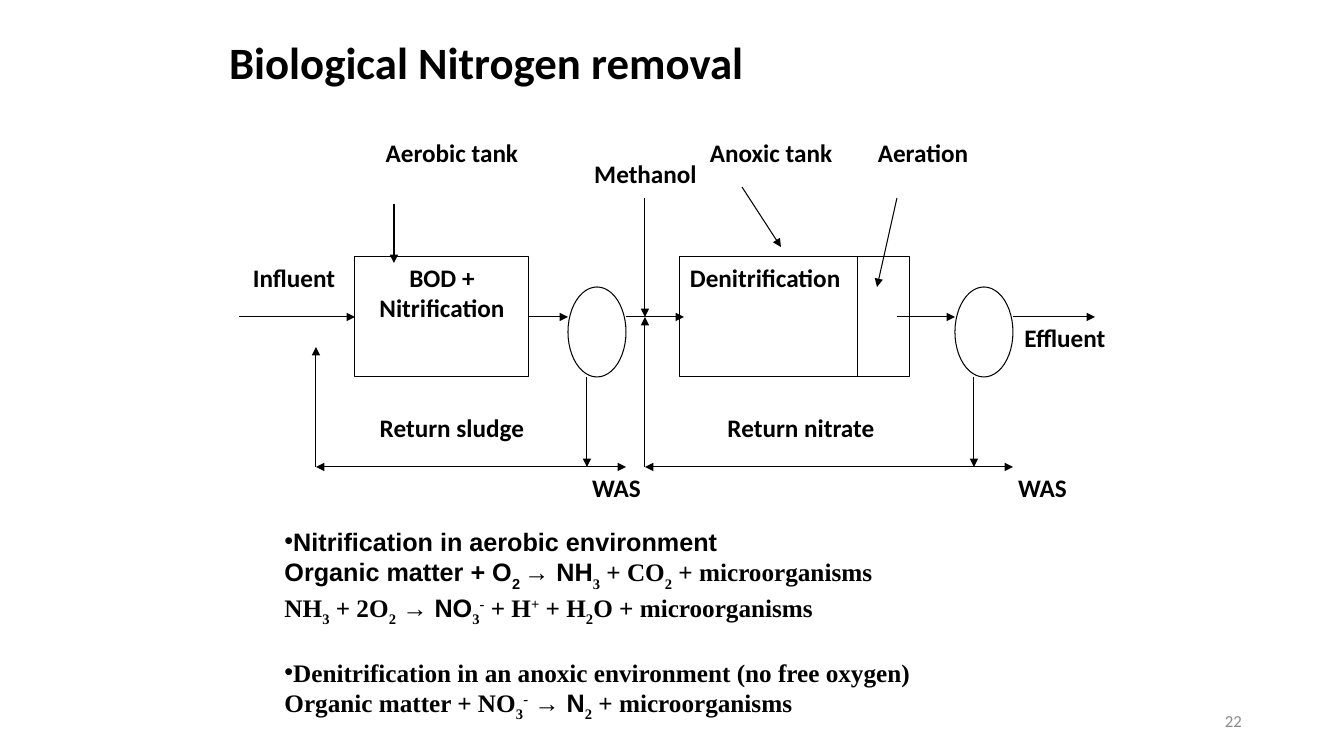
import pptx
import pptx.dml.color
import pptx.enum.dml
import pptx.enum.shapes
import pptx.enum.text
import pptx.oxml.ns
import pptx.util
from lxml import etree

SCALE = 914400 / 100.8
COLOURS = {"ink": "000000", "paper": "FFFFFF", "number": "898989"}
SANS, ARIAL, TIMES = "Calibri", "Arial", "Times New Roman"
SUB, SUP = -30000, 30000

TITLE = ("Biological Nitrogen removal", (219, 30, 907, 70))
PAGE = ("22", (950, 701, 302, 40))

# Diagram levels and the columns shared by several parts
TANK_TOP, TANK_BOTTOM, FLOW, RETURN = 257, 377, 317, 467
CLARIFIER_TOP, CLARIFIER_WIDTH = 287, 58
RECYCLE, DOSING = 316, 645
FIRST_CLARIFIER, SECOND_CLARIFIER = 568, 955

TANKS = [  # name, left, width, alignment
    ("BOD + Nitrification", 355, 174, "CENTER"),
    ("Denitrification", 680, 230, "LEFT"),
]
LABELS = [  # text, left, top, width
    ("Aerobic tank", 355, 132, 194),
    ("Methanol", 568, 153, 155),
    ("Anoxic tank", 684, 132, 174),
    ("Aeration", 836, 132, 174),
    ("Influent", 236, TANK_TOP, 116),
    ("Effluent", 1007, FLOW, 116),
    ("Return sludge", 355, 407, 194),
    ("Return nitrate", 704, 407, 194),
    ("WAS", 568, RETURN, 97),
    ("WAS", 994, RETURN, 97),
]
END, BOTH, NONE = ("tailEnd",), ("headEnd", "tailEnd"), ()
FLOWS = [  # start, finish, arrowheads
    ((626, FLOW), (684, FLOW), END),
    ((897, FLOW), (955, FLOW), END),
    ((1013, FLOW), (1095, FLOW), END),
    ((RECYCLE, RETURN), (RECYCLE, 347), END),
    ((626, RETURN), (RECYCLE, RETURN), BOTH),
    ((587, TANK_BOTTOM), (587, RETURN), END),
    ((DOSING, RETURN), (DOSING, FLOW), END),
    ((DOSING, RETURN), (1013, RETURN), BOTH),
    ((974, TANK_BOTTOM), (974, RETURN), END),
    ((858, TANK_TOP), (858, TANK_BOTTOM), NONE),
    ((394, 204), (394, 263), END),
    ((DOSING, 198), (DOSING, FLOW), END),
    ((742, 187), (781, 247), END),
    ((897, 198), (877, 287), END),
]
REACTIONS_BOX = (224, 521, 893, 224)
REACTIONS = [  # bulleted, space before in points, runs of (text, font, baseline)
    (True, 0, [("Nitrification in aerobic environment", ARIAL, 0)]),
    (False, 0, [("Organic matter + O", ARIAL, 0), ("2 ", ARIAL, SUB), ("→", TIMES, 0),
                (" NH", ARIAL, 0), ("3", TIMES, SUB), (" + CO", TIMES, 0),
                ("2", TIMES, SUB), (" + microorganisms", TIMES, 0)]),
    (False, 0, [("NH", TIMES, 0), ("3", TIMES, SUB), (" + 2O", TIMES, 0),
                ("2", TIMES, SUB), (" →", TIMES, 0), (" NO", ARIAL, 0),
                ("3", TIMES, SUB), ("-", TIMES, SUP), (" + H", TIMES, 0),
                ("+", TIMES, SUP), (" + H", TIMES, 0), ("2", TIMES, SUB),
                ("O + microorganisms", TIMES, 0)]),
    (True, 21, [("Denitrification in an anoxic environment (no free oxygen)", TIMES, 0)]),
    (False, 0, [("Organic matter + NO", TIMES, 0), ("3", TIMES, SUB), ("-", TIMES, SUP),
                (" →", TIMES, 0), (" N", ARIAL, 0), ("2", TIMES, SUB),
                (" + microorganisms", TIMES, 0)]),
]


def px(*lengths):
    return [pptx.util.Emu(round(length * SCALE)) for length in lengths]


def colour(name):
    return pptx.dml.color.RGBColor.from_string(COLOURS[name])


def add_run(paragraph, text, size=18, font=SANS, bold=True, ink="ink", baseline=0):
    run = paragraph.add_run()
    run.text = text
    run.font.name, run.font.size, run.font.bold = font, pptx.util.Pt(size), bold
    run.font.color.rgb = colour(ink)
    if baseline:
        run.font._element.set("baseline", str(baseline))


def place(shape, box):
    shape.left, shape.top, shape.width, shape.height = px(*box)


def set_frame(shape, anchor="TOP"):
    frame = shape.text_frame
    frame.word_wrap = True
    frame.auto_size = pptx.enum.text.MSO_AUTO_SIZE.NONE
    frame.vertical_anchor = getattr(pptx.enum.text.MSO_ANCHOR, anchor)
    return frame


def write_line(shape, text, align, anchor="TOP", **style):
    paragraph = set_frame(shape, anchor).paragraphs[0]
    paragraph.alignment = getattr(pptx.enum.text.PP_ALIGN, align)
    add_run(paragraph, text, **style)
    return paragraph


def add_vessel(slide, kind, box):
    vessel = slide.shapes.add_shape(getattr(pptx.enum.shapes.MSO_SHAPE, kind), *px(*box))
    vessel.shadow.inherit = False
    vessel.fill.solid()
    vessel.fill.fore_color.rgb = colour("paper")
    vessel.line.color.rgb = colour("ink")
    vessel.line.width = pptx.util.Pt(0.75)
    return vessel


def add_flow(slide, start, finish, heads):
    flow = slide.shapes.add_connector(
        pptx.enum.shapes.MSO_CONNECTOR.STRAIGHT, *px(*start, *finish))
    flow.line.color.rgb = colour("ink")
    flow.line.width = pptx.util.Pt(0.75)
    for head in heads:
        etree.SubElement(flow.line._get_or_add_ln(), pptx.oxml.ns.qn("a:" + head),
                         type="triangle")
    etree.SubElement(flow._element.spPr, pptx.oxml.ns.qn("a:effectLst"))
    return flow


def add_label(slide, text, box, align="CENTER", **style):
    label = slide.shapes.add_textbox(*px(*box))
    write_line(label, text, align, **style)


def write_reactions(body):
    place(body, REACTIONS_BOX)
    frame = set_frame(body)
    for index, (bulleted, before, runs) in enumerate(REACTIONS):
        paragraph = frame.add_paragraph() if index else frame.paragraphs[0]
        paragraph.space_before = pptx.util.Pt(before)
        properties = paragraph._p.get_or_add_pPr()
        properties.set("marL", "0")
        properties.set("indent", str(pptx.util.Inches(0.5)))
        if bulleted:
            etree.SubElement(properties, pptx.oxml.ns.qn("a:buChar"), char="•")
        else:
            etree.SubElement(properties, pptx.oxml.ns.qn("a:buNone"))
        for text, font, baseline in runs:
            add_run(paragraph, text, font=font, baseline=baseline)


def main():
    deck = pptx.Presentation()
    deck.slide_width, deck.slide_height = px(1344, 756)
    slide = deck.slides.add_slide(deck.slide_layouts[1])

    title = slide.shapes.title
    place(title, TITLE[1])
    write_line(title, TITLE[0], "LEFT", "MIDDLE", size=32).line_spacing = 0.9
    write_reactions(slide.placeholders[1])

    tanks = []
    for name, left, width, align in TANKS:
        tank = add_vessel(slide, "RECTANGLE", (left, TANK_TOP, width, TANK_BOTTOM - TANK_TOP))
        write_line(tank, name, align)
        tanks.append(tank)
    for left in (FIRST_CLARIFIER, SECOND_CLARIFIER):
        add_vessel(slide, "OVAL", (left, CLARIFIER_TOP, CLARIFIER_WIDTH,
                                   TANK_BOTTOM - CLARIFIER_TOP))

    add_flow(slide, (239, FLOW), (355, FLOW), END).end_connect(tanks[0], 1)
    add_flow(slide, (529, FLOW), (FIRST_CLARIFIER, FLOW), END).begin_connect(tanks[0], 3)
    for start, finish, heads in FLOWS:
        add_flow(slide, start, finish, heads)

    for text, left, top, width in LABELS:
        add_label(slide, text, (left, top, width, 60))
    add_label(slide, *PAGE, align="RIGHT", anchor="MIDDLE", size=12, bold=False, ink="number")

    deck.save("out.pptx")


if __name__ == "__main__":
    main()
